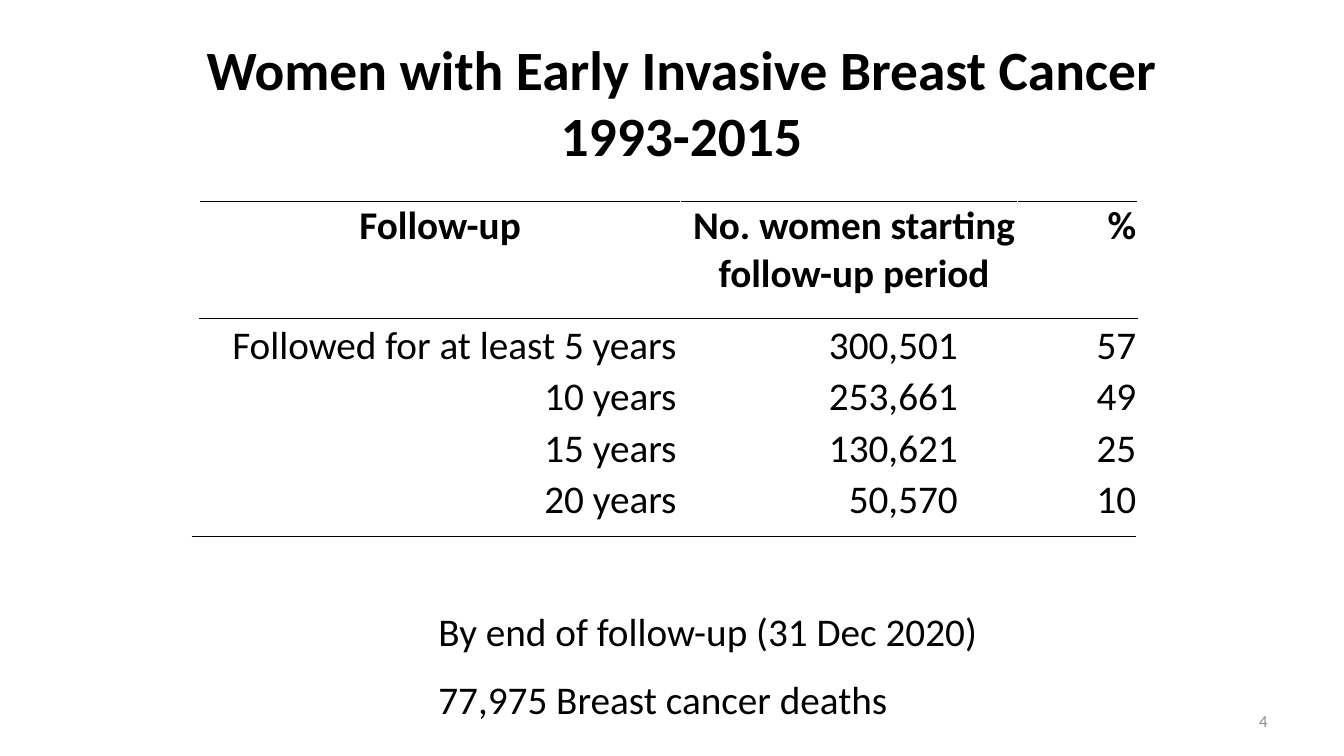
from lxml.etree import SubElement
from pptx import Presentation
from pptx.dml.color import RGBColor
from pptx.enum.shapes import MSO_CONNECTOR as Connector
from pptx.enum.text import MSO_ANCHOR as Anchor, MSO_AUTO_SIZE as AutoSize, PP_ALIGN as Align
from pptx.oxml import parse_xml
from pptx.oxml.ns import nsdecls, qn
from pptx.util import Inches, Pt

BLACK = RGBColor(0, 0, 0)
GREY = RGBColor(0x8C, 0x8C, 0x8C)

TITLE = {"size": Pt(39.6), "bold": True}
HEADING = {"size": Pt(28), "bold": True}
BODY = {"size": Pt(28), "bold": False}
PAGE_NUMBER = {"size": Pt(12), "bold": False}

HEADINGS = ["Follow-up", "No. women starting follow-up period", "%"]
HEADING_ALIGNS = [Align.CENTER, Align.CENTER, Align.RIGHT]
HEADING_INSETS = [(0.01, 0.01), (0.1, 0), (0.01, 0.01)]
FOLLOW_UP = [
    ["Followed for at least 5 years", "300,501", "57"],
    ["10 years", "253,661", "49"],
    ["15 years", "130,621", "25"],
    ["20 years", "50,570", "10"],
]
BODY_INSETS = [(0.04, 0.04), (0.01, 0.59), (0.01, 0.01)]
COLUMN_WIDTHS = [4.77, 3.34, 1.19]
HEADING_HEIGHT = 1.16
ROW_HEIGHT = 0.51


def write(para, text, style, align=Align.LEFT, color=BLACK):
    para.alignment = align
    span = para.add_run()
    span.text = text
    span.font.name = "Calibri"
    span.font.color.rgb = color
    for name, value in style.items():
        setattr(span.font, name, value)


def add_title(page, text):
    title = page.shapes.title
    place = {"left": 1.71, "top": 0.38, "width": 10.1, "height": 1.25}
    for name, value in place.items():
        setattr(title, name, Inches(value))
    title.text_frame.auto_size = AutoSize.NONE
    title.text_frame.vertical_anchor = Anchor.MIDDLE
    write(title.text_frame.paragraphs[0], text, TITLE, Align.CENTER)


def add_text(page, place, lines, style, gap=0, align=Align.LEFT, color=BLACK, anchor=Anchor.TOP):
    box = page.shapes.add_textbox(*map(Inches, place))
    frame = box.text_frame
    frame.word_wrap = True
    frame.vertical_anchor = anchor
    for index, line in enumerate(lines):
        para = frame.add_paragraph() if index else frame.paragraphs[0]
        if index:
            para.space_before = Pt(gap)
        write(para, line, style, align, color)


def add_borders(cell, sides):
    properties = cell._tc.get_or_add_tcPr()
    for side in sides:
        properties.append(parse_xml(
            f'<a:ln{side} {nsdecls("a")} w="6350"><a:solidFill>'
            f'<a:srgbClr val="{BLACK}"/></a:solidFill></a:ln{side}>'))


def fill_cell(cell, text, style, align, insets, anchor, sides):
    add_borders(cell, sides)
    cell.fill.background()
    left, right = insets
    layout = {
        "margin_left": Inches(left),
        "margin_right": Inches(right),
        "margin_top": Inches(0.01),
        "margin_bottom": 0,
        "vertical_anchor": anchor,
    }
    for name, value in layout.items():
        setattr(cell, name, value)
    write(cell.text_frame.paragraphs[0], text, style, align)


def add_follow_up_table(page):
    heights = [HEADING_HEIGHT] + [ROW_HEIGHT] * len(FOLLOW_UP)
    frame = page.shapes.add_table(
        len(heights), len(COLUMN_WIDTHS), Inches(1.98), Inches(2),
        Inches(sum(COLUMN_WIDTHS)), Inches(sum(heights)))
    table = frame.table
    table.first_row = False
    table.horz_banding = False
    for column, width in zip(table.columns, COLUMN_WIDTHS):
        column.width = Inches(width)
    for row, height in zip(table.rows, heights):
        row.height = Inches(height)
    for col, text in enumerate(HEADINGS):
        fill_cell(table.cell(0, col), text, HEADING, HEADING_ALIGNS[col],
                  HEADING_INSETS[col], Anchor.TOP, "TB")
    for row, values in enumerate(FOLLOW_UP, 1):
        for col, text in enumerate(values):
            fill_cell(table.cell(row, col), text, BODY, Align.RIGHT,
                      BODY_INSETS[col], Anchor.BOTTOM, "T" if row == 1 else "")


def add_rule(page, left, right, top):
    rule = page.shapes.add_connector(
        Connector.STRAIGHT, Inches(left), Inches(top), Inches(right), Inches(top))
    rule.line.color.rgb = BLACK
    rule.line.width = Pt(0.75)
    SubElement(rule._element.spPr, qn("a:effectLst"))


def main():
    deck = Presentation()
    deck.slide_width = Inches(13.33)
    deck.slide_height = Inches(7.5)
    page = deck.slides.add_slide(deck.slide_layouts[5])
    add_title(page, "Women with Early Invasive Breast Cancer 1993-2015")
    add_follow_up_table(page)
    add_rule(page, 1.9, 11.27, 5.32)
    add_text(page, (4.25, 5.98, 5.65, 1.25),
             ["By end of follow-up (31 Dec 2020)", "77,975 Breast cancer deaths"],
             BODY, gap=14.6)
    add_text(page, (9.56, 6.95, 3.11, 0.4), ["4"], PAGE_NUMBER,
             align=Align.RIGHT, color=GREY, anchor=Anchor.MIDDLE)
    deck.save("out.pptx")


if __name__ == "__main__":
    main()
